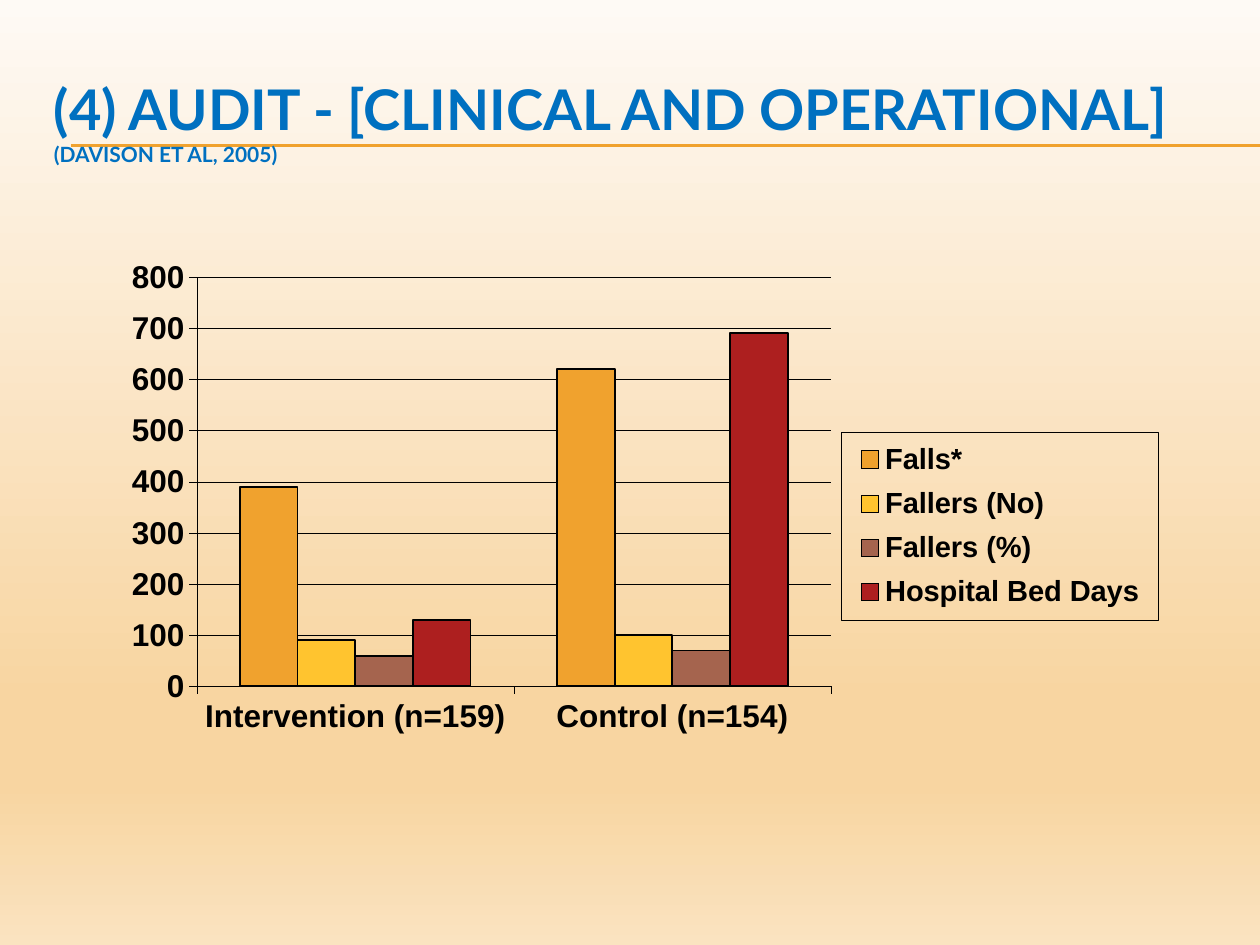
"""Build the falls audit slide with its clustered column chart."""
import lxml.etree
import pptx
import pptx.chart.data
import pptx.dml.color
import pptx.enum.chart
import pptx.enum.shapes
import pptx.enum.text
import pptx.oxml
import pptx.oxml.ns
import pptx.util

Inches = pptx.util.Inches
Pt = pptx.util.Pt
RGBColor = pptx.dml.color.RGBColor
qn = pptx.oxml.ns.qn

BLACK = RGBColor(0x00, 0x00, 0x00)
BLUE = RGBColor(0x00, 0x70, 0xC0)
ORANGE = RGBColor(0xF0, 0xA2, 0x2E)
YELLOW = RGBColor(0xFF, 0xC4, 0x2F)
BROWN = RGBColor(0xA5, 0x64, 0x4E)
RED = RGBColor(0xAD, 0x1F, 0x1F)
CREAM = RGBColor(0xFE, 0xFA, 0xF5)
SAND = RGBColor(0xF8, 0xD5, 0xA1)
PALE_SAND = RGBColor(0xFA, 0xE3, 0xC0)


def set_format(target, values):
    for name, value in values.items():
        if name == "color":
            target.color.rgb = value
        else:
            setattr(target, name, value)


def make_layout(x, y, width, height, inner=False):
    target = '<c:layoutTarget val="inner"/>' if inner else ""
    modes = '<c:xMode val="edge"/><c:yMode val="edge"/>'
    sizes = "".join(
        f'<c:{name} val="{value}"/>'
        for name, value in zip("xywh", (x, y, width, height))
    )
    return pptx.oxml.parse_xml(
        f'<c:layout {pptx.oxml.ns.nsdecls("c")}><c:manualLayout>'
        f"{target}{modes}{sizes}</c:manualLayout></c:layout>"
    )


presentation = pptx.Presentation()
presentation.slide_width = Inches(10)
presentation.slide_height = Inches(7.5)
slide = presentation.slides.add_slide(presentation.slide_layouts[6])

background = slide.background.fill
background.gradient()
background.gradient_angle = 270
stop_list = slide.element.find(".//" + qn("a:gsLst"))
for stop in list(stop_list):
    stop_list.remove(stop)
for position, color in ((0, CREAM), (74, SAND), (83, SAND), (100, PALE_SAND)):
    stop = lxml.etree.SubElement(stop_list, qn("a:gs"), pos=str(position * 1000))
    lxml.etree.SubElement(stop, qn("a:srgbClr"), val=str(color))

for y in (1.15, 1.16):
    rule = slide.shapes.add_connector(
        pptx.enum.shapes.MSO_CONNECTOR.STRAIGHT,
        Inches(0.56), Inches(y), Inches(10), Inches(y),
    )
    set_format(rule.line, {"color": ORANGE, "width": Pt(0.75)})
    lxml.etree.SubElement(rule.element.spPr, qn("a:effectLst"))

title = slide.shapes.add_textbox(Inches(0.33), Inches(0.5), Inches(9.5), Inches(0.92))
set_format(title.text_frame, {
    "word_wrap": True,
    "vertical_anchor": pptx.enum.text.MSO_ANCHOR.MIDDLE,
})
paragraph = title.text_frame.paragraphs[0]
title_format = {"name": "Lato", "bold": True, "color": BLUE}
heading = paragraph.add_run()
heading.text = "(4) AUDIT - [CLINICAL AND OPERATIONAL]"
set_format(heading.font, {**title_format, "size": Pt(32)})
paragraph.add_line_break()
citation = paragraph.add_run()
citation.text = "(DAVISON ET AL, 2005)"
set_format(citation.font, {**title_format, "size": Pt(12)})

series_table = (
    ("Falls*", (390, 620), ORANGE),
    ("Fallers (No)", (90, 100), YELLOW),
    ("Fallers (%)", (60, 70), BROWN),
    ("Hospital Bed Days", (130, 690), RED),
)
chart_data = pptx.chart.data.CategoryChartData()
chart_data.categories = ("Intervention (n=159)", "Control (n=154)")
for name, values, color in series_table:
    chart_data.add_series(name, values)
chart = slide.shapes.add_chart(
    pptx.enum.chart.XL_CHART_TYPE.COLUMN_CLUSTERED,
    Inches(0.89), Inches(1.98), Inches(8.39), Inches(4.39), chart_data,
).chart
chart_format = {"name": "Arial", "bold": True, "color": BLACK, "size": Pt(18)}
thin_line = {"color": BLACK, "width": Pt(0.25)}
chart.has_title = False
set_format(chart.font, chart_format)

plot = chart.plots[0]
set_format(plot, {"gap_width": 150, "overlap": 0, "vary_by_categories": False})
for series, (name, values, color) in zip(plot.series, series_table):
    series.format.fill.solid()
    series.format.fill.fore_color.rgb = color
    set_format(series.format.line, {"color": BLACK, "width": Pt(1)})

for axis in (chart.category_axis, chart.value_axis):
    set_format(axis, {
        "major_tick_mark": pptx.enum.chart.XL_TICK_MARK.OUTSIDE,
        "minor_tick_mark": pptx.enum.chart.XL_TICK_MARK.NONE,
    })
    set_format(axis.format.line, thin_line)
    set_format(axis.tick_labels.font, chart_format)
chart.category_axis.tick_label_position = pptx.enum.chart.XL_TICK_LABEL_POSITION.LOW
set_format(chart.value_axis, {
    "minimum_scale": 0,
    "maximum_scale": 800,
    "major_unit": 100,
    "has_major_gridlines": True,
})
set_format(chart.value_axis.major_gridlines.format.line, thin_line)

chart.has_legend = True
set_format(chart.legend, {
    "position": pptx.enum.chart.XL_LEGEND_POSITION.RIGHT,
    "include_in_layout": False,
})
set_format(chart.legend.font, {**chart_format, "size": Pt(16.6)})

chart_element = chart.element
plot_area = chart_element.find(".//" + qn("c:plotArea"))
legend = chart_element.find(".//" + qn("c:legend"))
for parent in (plot_area, legend):
    for layout in parent.findall(qn("c:layout")):
        parent.remove(layout)
plot_area.insert(0, make_layout(0.08, 0.05, 0.6, 0.74, inner=True))
overlay = legend.find(qn("c:overlay"))
overlay.addprevious(make_layout(0.69, 0.33, 0.3, 0.34))
overlay.addnext(pptx.oxml.parse_xml(
    f'<c:spPr {pptx.oxml.ns.nsdecls("c", "a")}><a:noFill/><a:ln w="{Pt(0.25)}">'
    f'<a:solidFill><a:srgbClr val="{BLACK}"/></a:solidFill></a:ln></c:spPr>'
))

presentation.save("out.pptx")
